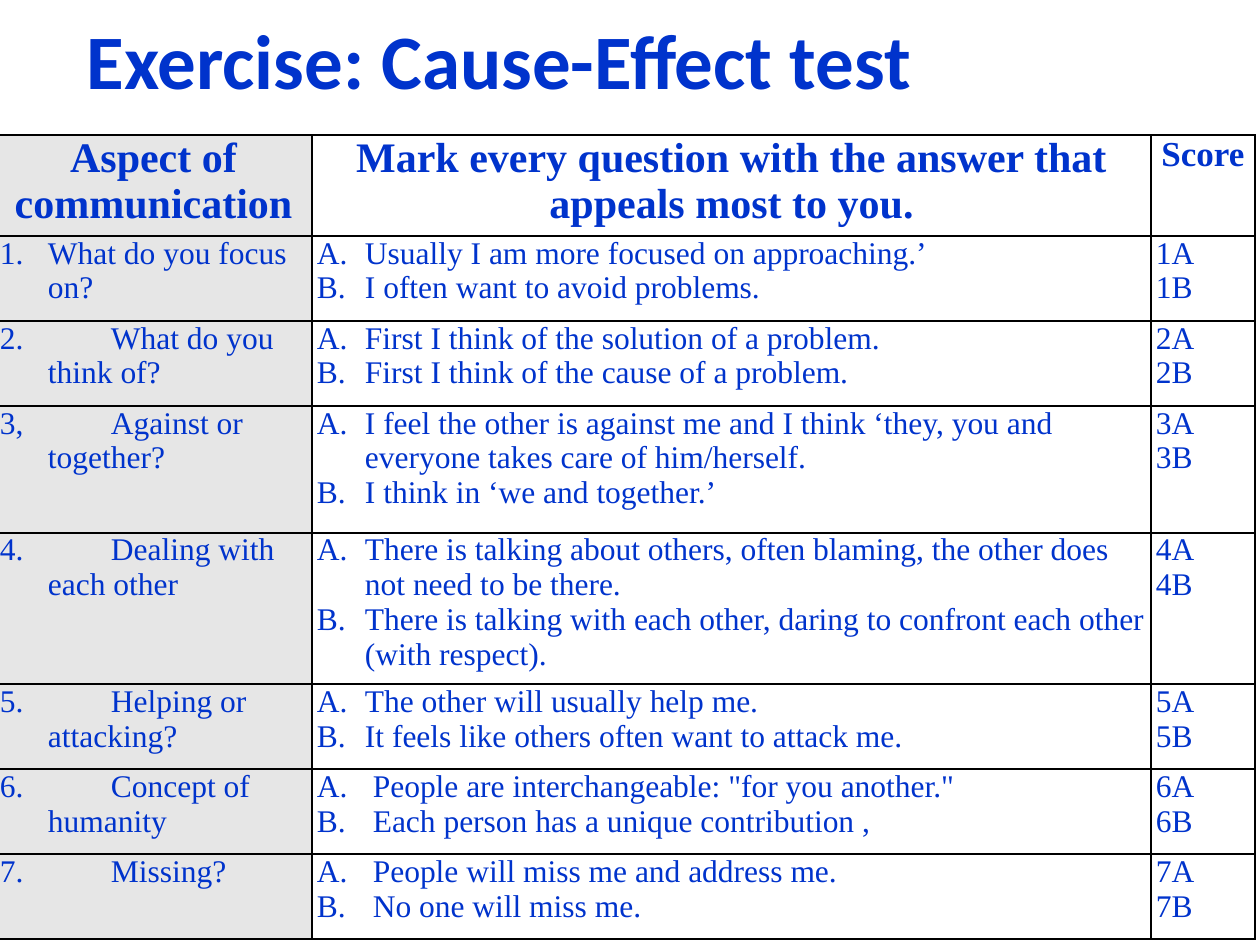
from lxml import etree
from pptx import Presentation
from pptx import util as u
from pptx.dml.color import RGBColor
from pptx.enum import text
from pptx.oxml import ns

PX = 914400 // 126
BLUE, GREY, WHITE, BLACK = "0033CC", "E6E6E6", "FFFFFF", "000000"
COLUMNS = [317, 839, 104]
ROWS = [101, 85, 85, 127, 151, 85, 85, 85]
HEADINGS = [
    ("Aspect of communication", 24),
    ("Mark every question with the answer that appeals most to you.", 24),
    ("Score", 20),
]
QUESTIONS = [
    ("What do you focus on?",
     "Usually I am more focused on approaching.’",
     "I often want to avoid problems."),
    ("2.\t\tWhat do you think of?",
     "First I think of the solution of a problem.",
     "First I think of the cause of a problem."),
    ("3,\t\tAgainst or together?",
     "I feel the other is against me and I think ‘they, you and everyone takes care of him/herself.",
     "I think in ‘we and together.’"),
    ("4.\t\tDealing with each other",
     "There is talking about others, often blaming, the other does not need to be there.",
     "There is talking with each other, daring to confront each other (with respect)."),
    ("5.\t\tHelping or attacking?",
     "The other will usually help me.",
     "It feels like others often want to attack me."),
    ("6.\t\tConcept of humanity",
     " People are interchangeable: \"for you another.\"",
     " Each person has a unique contribution ,"),
    ("7.\t\tMissing?",
     " People will miss me and address me.",
     " No one will miss me."),
]


def px(length):
    """Turn px into EMU."""
    return u.Emu(length * PX)


def colour(code):
    """Turn a hex string into a colour."""
    return RGBColor.from_string(code)


def child(parent, tag, **attributes):
    """Append a DrawingML element to its parent."""
    values = {name: str(value) for name, value in attributes.items()}
    return etree.SubElement(parent, ns.qn("a:" + tag), values)


def write(frame, lines, size=18, font="Times New Roman", bold=False,
          align=text.PP_ALIGN.LEFT, hanging=0, numbering=None, tabs=()):
    """Fill a text frame with one paragraph per line."""
    for index, line in enumerate(lines):
        paragraph = frame.add_paragraph() if index else frame.paragraphs[0]
        paragraph.alignment = align
        run = paragraph.add_run()
        run.text = line
        run.font.size, run.font.name, run.font.bold = u.Pt(size), font, bold
        run.font.color.rgb = colour(BLUE)
        properties = paragraph._p.get_or_add_pPr()
        properties.set("marL", str(px(hanging)))
        properties.set("indent", str(px(-hanging)))
        if numbering:
            child(properties, "buFont", typeface="+mj-lt")
            child(properties, "buAutoNum", type=numbering)
        else:
            child(properties, "buNone")
        if tabs:
            stops = child(properties, "tabLst")
            for position in tabs:
                child(stops, "tab", pos=px(position), algn="l")


def style_cell(cell, fill):
    """Set the margins, borders and fill of a cell."""
    cell.margin_left = cell.margin_right = px(5)
    cell.margin_top = cell.margin_bottom = 0
    properties = cell._tc.get_or_add_tcPr()
    for side in ("lnL", "lnR", "lnT", "lnB"):
        border = child(properties, side, w=u.Pt(1))
        child(child(border, "solidFill"), "srgbClr", val=BLACK)
    cell.fill.solid()
    cell.fill.fore_color.rgb = colour(fill)


def add_heading(slide):
    """Place the slide title."""
    title = slide.shapes.title
    title.left, title.top, title.width, title.height = map(px, (74, 6, 861, 106))
    frame = title.text_frame
    frame.word_wrap = False
    frame.auto_size = text.MSO_AUTO_SIZE.SHAPE_TO_FIT_TEXT
    frame.vertical_anchor = text.MSO_ANCHOR.TOP
    write(frame, ["Exercise: Cause-Effect test"], size=44, font="Calibri", bold=True)


def add_test(slide):
    """Add the table of questions, answers and scores."""
    table = slide.shapes.add_table(
        len(ROWS), len(COLUMNS), px(-5), px(135), px(sum(COLUMNS)), px(sum(ROWS))).table
    for column, width in zip(table.columns, COLUMNS):
        column.width = px(width)
    for row, height in zip(table.rows, ROWS):
        row.height = px(height)
        for index, cell in enumerate(row.cells):
            style_cell(cell, WHITE if index else GREY)

    for index, (heading, size) in enumerate(HEADINGS):
        write(table.cell(0, index).text_frame, [heading], size=size, bold=True,
              align=text.PP_ALIGN.CENTER)
    for number, (aspect, *answers) in enumerate(QUESTIONS, 1):
        aspect_cell, answer_cell, score_cell = table.rows[number].cells
        write(aspect_cell.text_frame, [aspect], hanging=48, tabs=[32],
              numbering="arabicPeriod" if number == 1 else None)
        write(answer_cell.text_frame, answers, hanging=48, tabs=[44, 63],
              numbering="alphaUcPeriod")
        write(score_cell.text_frame, [f"{number}{letter}" for letter in "AB"])


def main():
    """Build and save the slide."""
    deck = Presentation()
    deck.slide_width, deck.slide_height = px(1260), px(945)
    slide = deck.slides.add_slide(deck.slide_layouts[5])
    slide.background.fill.solid()
    slide.background.fill.fore_color.rgb = colour(WHITE)
    add_heading(slide)
    add_test(slide)
    deck.save("out.pptx")


if __name__ == "__main__":
    main()
